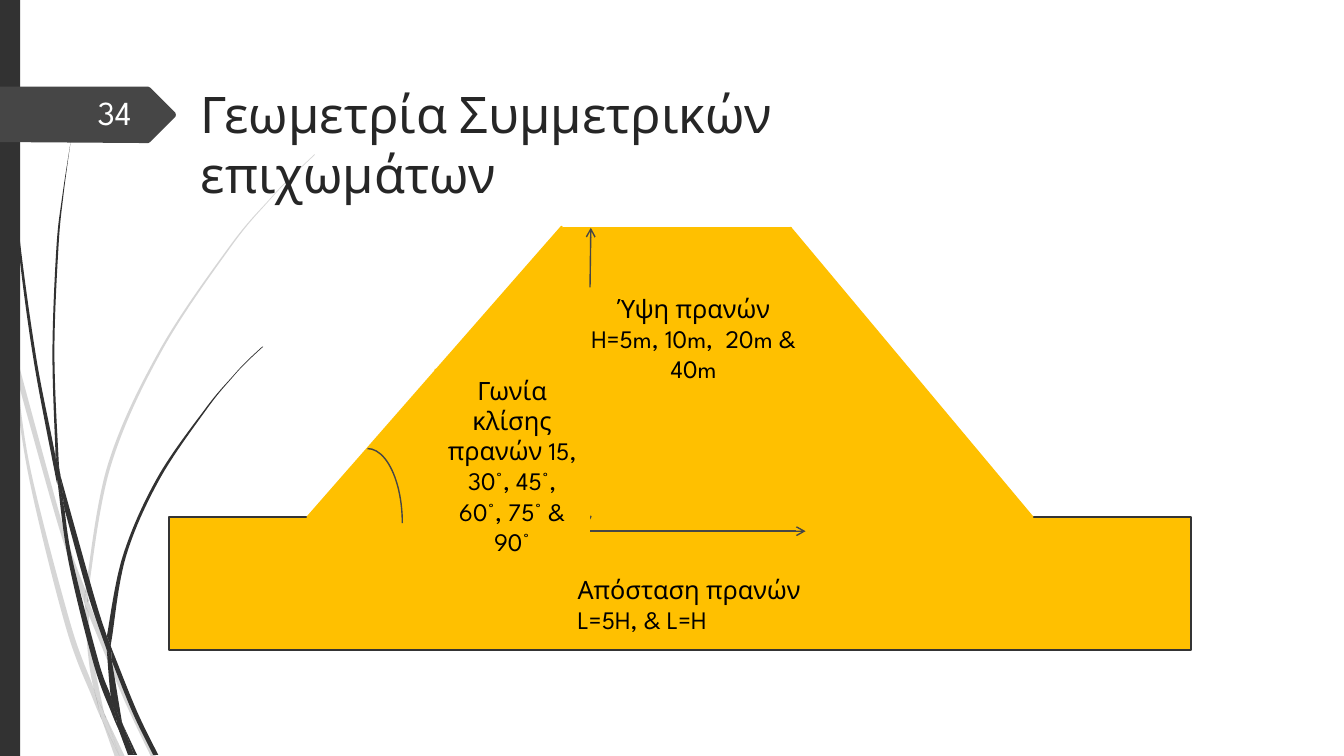
from dataclasses import dataclass

from lxml import etree
from pptx import Presentation
from pptx.dml.color import RGBColor
from pptx.enum.shapes import MSO_CONNECTOR, MSO_SHAPE
from pptx.enum.text import MSO_ANCHOR, MSO_AUTO_SIZE, PP_ALIGN
from pptx.oxml.ns import qn
from pptx.util import Inches, Pt

RECT, WEDGE, ARC = MSO_SHAPE.RECTANGLE, MSO_SHAPE.RIGHT_TRIANGLE, MSO_SHAPE.ARC
LEFT, MID, FULL = PP_ALIGN.LEFT, PP_ALIGN.CENTER, PP_ALIGN.JUSTIFY
TOP, CENTRE = MSO_ANCHOR.TOP, MSO_ANCHOR.MIDDLE
LINE = MSO_CONNECTOR.STRAIGHT

CELL = Inches(0.1)  # all lengths count columns and rows of this grid
COLS, ROWS = 133.3, 75
FONT = "League Spartan"
HEX = {"dark": "323232", "edge": "343434", "flag": "464646", "soil": "FFC000",
       "title": "262626", "ink": "000000", "pale": "FEFFFF"}

Point = tuple[float, float]
Box = tuple[float, float, float, float]


@dataclass
class Blade:
    """A grass blade between two curved rims, both listed in one direction."""
    left: list[Point]
    right: list[Point]


@dataclass
class Block:
    kind: int
    box: Box
    edge: str
    width: float = 1.5
    turn: int = 0


@dataclass
class Label:
    text: str
    box: Box
    align: int = MID


FAINT = [
    Blade([(0, 28.2), (0.9, 32.2), (1.1, 35)], [(0, 29.9), (1, 34.4), (1.1, 35)]),
    Blade([(1.7, 37.6), (5.8, 52.2), (8.4, 59.9)], [(1.4, 34.5), (6.2, 52), (8.5, 58.6)]),
    Blade([(8.8, 61), (12.3, 69.4), (15, 75.1)],
          [(8.8, 59.6), (9.2, 60.7), (12.7, 69.2), (15.5, 75.1)]),
    Blade([(10.5, 71.1), (11.9, 75.1)], [(10.5, 71.1), (12.4, 75.1)]),
    Blade([(1.1, 35), (2.8, 47), (6.5, 62.1), (9.2, 69.3), (10.1, 71.4)],
          [(1.7, 37.6), (3.1, 46.9), (7, 61.9), (9.3, 68.3), (9.9, 70.7)]),
    Blade([(8.4, 59.9), (8.7, 64.6), (9.3, 68.3), (10.5, 71.1)],
          [(8.8, 60.8), (8.8, 61), (9.1, 64.6), (10.3, 70.6), (10.5, 71.1)]),
    Blade([(31.2, 15.3), (28.9, 17.5), (26.8, 19.7), (22.8, 24.4), (15.8, 34.8),
           (10.7, 46.1), (8.5, 58.4), (8.5, 58.6)],
          [(31.2, 15.4), (29, 17.5), (26.8, 19.8), (22.9, 24.5), (16, 34.9),
           (11, 46.2), (8.8, 58.4), (8.8, 59.6)]),
    Blade([(10.1, 71.4), (11.4, 75.1)], [(10.1, 71.4), (11.9, 75.1)]),
    Blade([(8.5, 58.6), (8.4, 59.9), (8.8, 60.8)], [(8.8, 59.6), (8.8, 61)]),
    Blade([(9.3, 68.3), (9.9, 70.7), (10.1, 71.4), (11.9, 75.1)],
          [(9.3, 68.3), (9.6, 69.2), (10.5, 71.1), (11.9, 75.1)]),
]
BOLD = [
    Blade([(0.3, 0), (0.4, 4.8), (0.7, 11), (1.7, 23.3), (3.3, 35.5), (5.6, 47.7)],
          [(0.4, 0), (0.5, 4.8), (0.8, 10.9), (1.9, 23.2), (3.6, 35.5), (5.5, 45.3),
           (5.7, 48.1)]),
    Blade([(6.4, 50.5), (8.8, 59.2), (10.6, 64.5)], [(6, 47.2), (9.3, 59), (10.6, 63.1)]),
    Blade([(11.1, 65.6), (13.2, 70.8), (15.2, 74.9)],
          [(11, 64.1), (11.3, 64.9), (13.6, 70.6), (15.7, 74.9)]),
    Blade([(5.7, 47.7), (6.8, 55.7), (9.3, 65.9), (11.1, 70.8), (11.7, 72.2)],
          [(6.4, 50.5), (7.2, 55.6), (9.8, 65.7), (11, 69.1), (11.6, 71.7)]),
    Blade([(7, 14.1), (6.2, 19.3), (5.6, 24.5), (5.2, 34.9), (5.5, 44.9)],
          [(7, 14.1), (6.3, 19.3), (5.8, 24.5), (5.4, 34.9), (5.8, 45.3), (6, 47.2)]),
    Blade([(12.2, 71.9), (13.3, 74.9)], [(12.2, 71.9), (13.6, 74.9)]),
    Blade([(5.5, 44.9), (5.5, 45.3), (5.7, 47.7), (6.4, 50.5)],
          [(5.5, 44.9), (6, 47.2), (6.4, 50.5)]),
    Blade([(26, 34.4), (24.5, 35.8), (23.1, 37.3), (20.4, 40.5), (15.6, 47.4),
           (12.2, 55.1), (10.6, 63.1)],
          [(26.1, 34.4), (24.5, 35.9), (23.1, 37.4), (20.5, 40.6), (15.8, 47.6),
           (12.5, 55.2), (11.1, 63.3), (11, 64.1)]),
    Blade([(11.7, 72.2), (12.7, 74.9)], [(11.7, 72.2), (13.1, 74.9)]),
    Blade([(10.6, 64.5), (11, 69.1), (11.6, 70.6), (12.2, 71.9)],
          [(10.6, 64.5), (10.9, 65.1), (11.1, 65.6), (12.1, 71.6), (12.2, 71.9)]),
    Blade([(10.6, 63.1), (10.6, 64.5)], [(11, 64.1), (11.1, 65.6)]),
    Blade([(11, 69.1), (11.6, 71.7), (11.7, 72.2), (13, 74.9)],
          [(11, 69.1), (11.6, 70.6), (12.2, 71.9), (13.3, 74.9)]),
]
FLAG = [(0, 8.6), (14.7, 8.6), (14.9, 8.7), (17.4, 11.2), (17.45, 11.4),
        (17.4, 11.6), (14.9, 14.1), (14.7, 14.2), (0, 14.1)]
MOUND = [
    Block(RECT, (16.8, 51.3, 101.3, 13.2), "edge"),
    Block(WEDGE, (78.4, 22.6, 24, 28.7), "soil"),
    Block(RECT, (55.8, 22.6, 22.7, 28.8), "soil"),
    Block(WEDGE, (28.7, 24.3, 28.8, 25.2), "soil", turn=270),
]
ANGLE = Block(ARC, (33, 44.5, 6.9, 14.8), "flag", 1)
ARROWS = [(53.9, 52.7, 79.9, 52.7), (58.6, 22.6, 58.2, 52.1)]
HEIGHT = Label("Ύψη πρανών H=5m, 10m,  20m & 40m", (57.6, 28.5, 22.4, 10.1))
NOTES = [
    Label("Γωνία κλίσης πρανών 15, 30°, 45°, 60°, 75° & 90°", (43.1, 36.6, 15.4, 19.2)),
    Label("Απόσταση πρανών L=5H, & L=H", (56.3, 56.4, 26.4, 7.1), LEFT),
]


def rgb(name: str) -> RGBColor:
    return RGBColor.from_string(HEX[name])


def grid(box: tuple[float, ...]) -> list[int]:
    return [round(n * CELL) for n in box]


def paint(shape, fill: str, edge: str = "", width: float = 1.5) -> None:
    shape.shadow.inherit = False
    shape.fill.solid()
    shape.fill.fore_color.rgb = rgb(fill)
    if edge:
        shape.line.color.rgb = rgb(edge)
        shape.line.width = Pt(width)
    else:
        shape.line.fill.background()


def write(shape, text: str, size: int, ink: str, align: int, anchor: int) -> None:
    frame = shape.text_frame
    look = {"word_wrap": True, "auto_size": MSO_AUTO_SIZE.NONE, "vertical_anchor": anchor}
    for key, val in look.items():
        setattr(frame, key, val)
    para = frame.paragraphs[0]
    para.alignment = align
    run = para.add_run()
    run.text = text
    for key, val in {"size": Pt(size), "name": FONT}.items():
        setattr(run.font, key, val)
    run.font.color.rgb = rgb(ink)


def trace(shapes, pts: list[Point], fill: str):
    pen = shapes.build_freeform(*grid(pts[0]))
    pen.add_line_segments([grid(p) for p in pts[1:]], close=True)
    shape = pen.convert_to_shape()
    paint(shape, fill)
    return shape


def bend(shape, legs: list, rim: list[Point]) -> None:
    """Turn the straight legs along a rim into cubic curves."""
    ends = [rim[0], *rim, rim[-1]]
    for leg, a, b, c, d in zip(legs, ends, ends[1:], ends[2:], ends[3:]):
        leg.tag = qn("a:cubicBezTo")
        for i, (p, q, r) in enumerate(((b, a, c), (c, d, b))):
            x, y = grid([m + (o - n) / 6 for m, n, o in zip(p, q, r)])
            knob = etree.Element(qn("a:pt"), x=str(x - shape.left), y=str(y - shape.top))
            leg.insert(i, knob)


def grow(shapes, blade: Blade, alpha: int) -> None:
    back = blade.right[::-1]
    shape = trace(shapes, blade.left + back, "dark")
    legs = shape._element.findall(".//" + qn("a:lnTo"))
    bend(shape, legs[:len(blade.left) - 1], blade.left)
    bend(shape, legs[len(blade.left):], back)
    if alpha < 100:
        tint = shape.fill._xPr.find(".//" + qn("a:srgbClr"))
        etree.SubElement(tint, qn("a:alpha"), val=str(alpha * 1000))


def place(shapes, block: Block) -> None:
    shape = shapes.add_shape(block.kind, *grid(block.box))
    paint(shape, "soil", block.edge, block.width)
    shape.rotation = block.turn


def arrow(shapes, ends: Box) -> None:
    line = shapes.add_connector(LINE, *grid(ends))
    line.line.color.rgb = rgb("flag")
    line.line.width = Pt(1)
    for tip in ("a:headEnd", "a:tailEnd"):
        etree.SubElement(line.line._get_or_add_ln(), qn(tip), type="arrow")
    etree.SubElement(line._element.spPr, qn("a:effectLst"))


def tag(shapes, label: Label) -> None:
    shape = shapes.add_shape(RECT, *grid(label.box))
    paint(shape, "soil")
    write(shape, label.text, 18, "ink", label.align, CENTRE)


def main() -> None:
    deck = Presentation()
    deck.slide_width, deck.slide_height = grid((COLS, ROWS))
    shapes = deck.slides.add_slide(deck.slide_layouts[5]).shapes
    title = shapes.title
    for tuft, alpha in ((FAINT, 20), (BOLD, 100)):
        for blade in tuft:
            grow(shapes, blade, alpha)
    paint(shapes.add_shape(RECT, *grid((0, 0, 2, ROWS))), "dark")
    trace(shapes, FLAG, "flag")
    spot = grid((18.9, 7.7, 86.9, 9.8))
    for key, val in zip(("left", "top", "width", "height"), spot):
        setattr(title, key, val)
    write(title, "Γεωμετρία Συμμετρικών επιχωμάτων", 36, "title", LEFT, TOP)
    for block in MOUND:
        place(shapes, block)
    for ends in ARROWS:
        arrow(shapes, ends)
    tag(shapes, HEIGHT)
    place(shapes, ANGLE)
    for note in NOTES:
        tag(shapes, note)
    page = shapes.add_textbox(*grid((8.7, 8.6, 7.5, 6.6)))
    write(page, "34", 24, "pale", FULL, TOP)
    deck.save("out.pptx")


if __name__ == "__main__":
    main()
